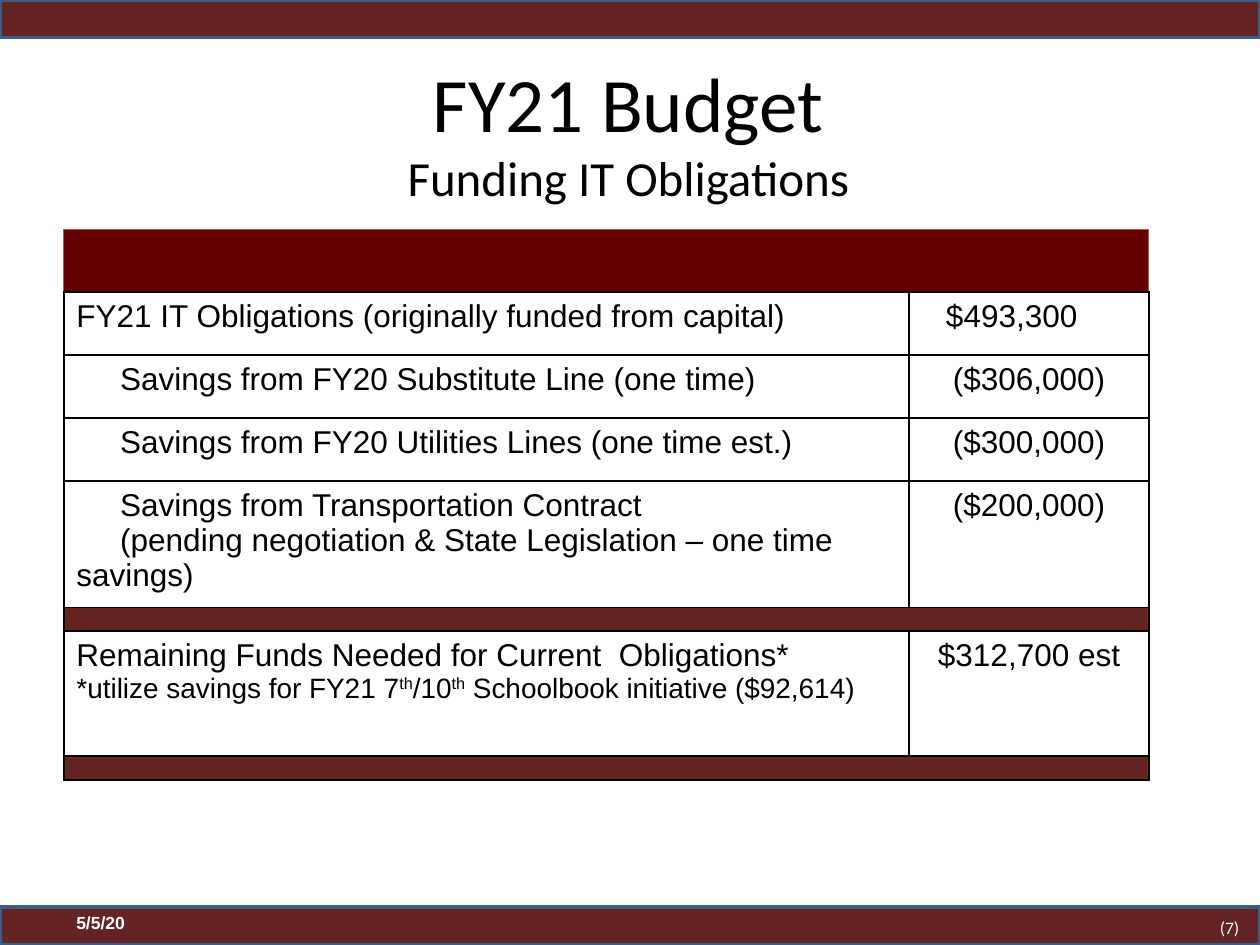
from lxml import etree
from pptx import Presentation
from pptx.dml.color import RGBColor
from pptx.enum.shapes import MSO_SHAPE
from pptx.enum.text import MSO_ANCHOR, PP_ALIGN
from pptx.oxml.ns import qn
from pptx.util import Pt

RECT = MSO_SHAPE.RECTANGLE
MIDDLE = MSO_ANCHOR.MIDDLE
LEFT, CENTER = PP_ALIGN.LEFT, PP_ALIGN.CENTER

COLORS = {
    "bar": "632423", "bar_line": "395E89", "header": "640000",
    "header_line": "C0504D", "divider": "642422",
    "black": "000000", "white": "FFFFFF",
}
WIDTH, HEIGHT, BAR_HEIGHT = 720, 540, 21.6
COL_WIDTHS = [483, 137]
ROW_HEIGHTS = [36, 36, 36, 36, 49.7, 13.7, 71.3, 13.7]
INDENT = 25
DIVIDERS = (5, 7)
ROWS = {
    1: ([("FY21 IT Obligations (originally funded from capital)", 0)], "$493,300"),
    2: ([("Savings from FY20 Substitute Line (one time)", INDENT)], "($306,000)"),
    3: ([("Savings from FY20 Utilities Lines (one time est.)", INDENT)], "($300,000)"),
    4: ([("Savings from Transportation Contract", INDENT),
         ("(pending negotiation & State Legislation – one time savings)", INDENT)],
        "($200,000)"),
    6: ([("Remaining Funds Needed for Current  Obligations*", 0)], "$312,700 est"),
}
FOOTNOTE = [("*utilize savings for FY21 7", False), ("th", True), ("/10", False),
            ("th", True), (" Schoolbook initiative ($92,614)", False)]


def rgb(name):
    return RGBColor.from_string(COLORS[name])


def set_attrs(obj, values):
    for name, value in values.items():
        setattr(obj, name, value)


def add_run(p, text, size, color="black", font="Arial", bold=False):
    r = p.add_run()
    r.text = text
    set_attrs(r.font, {"size": Pt(size), "name": font, "bold": bold})
    r.font.color.rgb = rgb(color)
    return r


def add_bar(s, top):
    sp = s.shapes.add_shape(RECT, 0, Pt(top), Pt(WIDTH), Pt(BAR_HEIGHT))
    sp.shadow.inherit = False
    sp.fill.solid()
    sp.fill.fore_color.rgb = rgb("bar")
    sp.line.color.rgb = rgb("bar_line")
    sp.line.width = Pt(2)


def add_label(s, text, box, margins, **style):
    tf = s.shapes.add_textbox(*map(Pt, box)).text_frame
    set_attrs(tf, {"word_wrap": True, **margins})
    add_run(tf.paragraphs[0], text, 10, "white", **style)


def add_title(s):
    sp = s.shapes.title
    set_attrs(sp, {"left": Pt(15), "top": Pt(30), "width": Pt(688), "height": Pt(90)})
    sp.text_frame.vertical_anchor = MIDDLE
    p = sp.text_frame.paragraphs[0]
    p.alignment = CENTER
    add_run(p, "FY21 Budget", 44, font="Calibri")
    p.add_line_break()
    add_run(p, "Funding IT Obligations", 28, font="Calibri")


def set_borders(cell, borders):
    tcPr = cell._tc.get_or_add_tcPr()
    for i, side in enumerate("LRTB"):
        color, width = borders.get(side, (None, 0))
        ln = etree.Element(qn("a:ln" + side), w=str(Pt(width)))
        if color:
            fill = etree.SubElement(ln, qn("a:solidFill"))
            etree.SubElement(fill, qn("a:srgbClr"), val=COLORS[color])
        else:
            etree.SubElement(ln, qn("a:noFill"))
        tcPr.insert(i, ln)


def fill_cell(cell, color):
    cell.fill.solid()
    cell.fill.fore_color.rgb = rgb(color)


def shrink_empty(cell):
    set_attrs(cell, {"margin_top": 0, "margin_bottom": 0})
    p = cell.text_frame.paragraphs[0]._p
    etree.SubElement(p, qn("a:endParaRPr"), sz="800")


def write_line(p, text, indent=0, align=LEFT):
    p.alignment = align
    p._p.get_or_add_pPr().set("indent", str(Pt(indent)))
    add_run(p, text, 18)


def write_row(table, row, lines, amount):
    tf = table.cell(row, 0).text_frame
    for i, (text, indent) in enumerate(lines):
        write_line(tf.add_paragraph() if i else tf.paragraphs[0], text, indent)
    write_line(table.cell(row, 1).text_frame.paragraphs[0], amount, align=CENTER)


def write_footnote(cell):
    p = cell.text_frame.add_paragraph()
    for text, raised in FOOTNOTE:
        r = add_run(p, text, 16)
        if raised:
            r._r.get_or_add_rPr().set("baseline", "30000")


def add_budget_table(s):
    frame = s.shapes.add_table(len(ROW_HEIGHTS), len(COL_WIDTHS), Pt(36.5), Pt(131),
                               Pt(sum(COL_WIDTHS)), Pt(sum(ROW_HEIGHTS)))
    table = frame.table
    set_attrs(table, {"first_row": False, "horz_banding": False})
    for col, width in zip(table.columns, COL_WIDTHS):
        col.width = Pt(width)
    black, red = ("black", 1), ("header_line", 0.75)
    for i, height in enumerate(ROW_HEIGHTS):
        table.rows[i].height = Pt(height)
        for j in range(len(COL_WIDTHS)):
            cell = table.cell(i, j)
            if i == 0:
                fill_cell(cell, "header")
                set_borders(cell, {"LR"[j]: red, "T": red, "B": black})
                continue
            if i in DIVIDERS:
                fill_cell(cell, "divider")
                shrink_empty(cell)
            else:
                cell.fill.background()
            set_borders(cell, dict.fromkeys("LRTB", black))
    for row in DIVIDERS:
        table.cell(row, 0).merge(table.cell(row, 1))
    for row, (lines, amount) in ROWS.items():
        write_row(table, row, lines, amount)
    table.cell(1, 1).margin_right = Pt(27)
    write_footnote(table.cell(6, 0))


def main():
    prs = Presentation()
    set_attrs(prs, {"slide_width": Pt(WIDTH), "slide_height": Pt(HEIGHT)})
    s = prs.slides.add_slide(prs.slide_layouts[5])
    for top in (0, HEIGHT - BAR_HEIGHT):
        add_bar(s, top)
    sides = ("left", "right", "top", "bottom")
    add_label(s, "(7)", (690, 517.7, 36, 23),
              {f"margin_{side}": Pt(7.2) for side in sides}, font="Calibri")
    add_label(s, "5/5/20", (36.5, 517.7, 168, 29), {}, bold=True)
    add_title(s)
    add_budget_table(s)
    prs.save("out.pptx")


if __name__ == "__main__":
    main()
